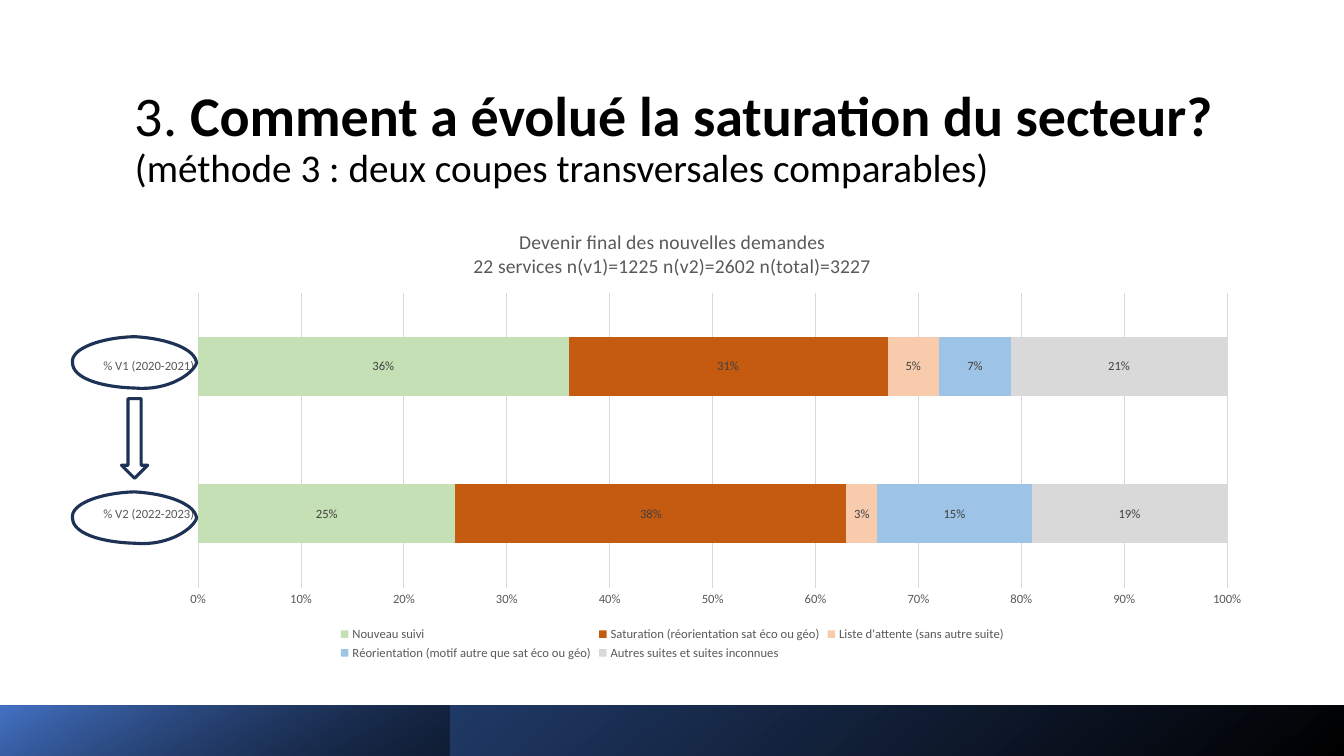
import pptx
import pptx.chart.data
import pptx.dml.color
import pptx.enum.chart
import pptx.enum.shapes
import pptx.enum.text
import pptx.oxml
import pptx.oxml.ns
import pptx.util

# The grid has square cells, ten to the inch.
CELL = pptx.util.Inches(0.1)
COLS, ROWS = 133.33, 75
FONT = "Calibri"
HUES = {
    "ink": "000000", "blue": "2F5597", "sky": "4472C4", "navy": "1E3256",
    "grey": "595959", "label": "404040", "rule": "D9D9D9",
}
CATS = ["% V2 (2022-2023)", "% V1 (2020-2021)"]
SERIES = [
    ("Nouveau suivi", (0.25, 0.36), "C5E0B4"),
    ("Saturation (réorientation sat éco ou géo)", (0.38, 0.31), "C55A11"),
    ("Liste d'attente (sans autre suite)", (0.03, 0.05), "F8CBAD"),
    ("Réorientation (motif autre que sat éco ou géo)", (0.15, 0.07), "9DC3E6"),
    ("Autres suites et suites inconnues", (0.19, 0.21), "D9D9D9"),
]
# Bézier points of the hand-drawn ring, as shares of its box.
RING = [
    (0, 0.51), (-0.02, 0.24), (0.22, 0.02), (0.5, 0),
    (0.78, 0.04), (0.99, 0.25), (1, 0.51),
    (0.98, 0.69), (0.79, 1.06), (0.5, 1),
    (0.22, 0.98), (0, 0.8), (0, 0.51),
]


def rgb(code):
    return pptx.dml.color.RGBColor.from_string(code)


def place(box):
    return [round(n * CELL) for n in box]


def style(item, values):
    for name, value in values.items():
        setattr(item, name, value)


def set_font(font, size, hue, bold=False):
    style(font, {"name": FONT, "size": pptx.util.Pt(size), "bold": bold})
    font.color.rgb = rgb(HUES[hue])


def set_line(line, hue, width):
    line.color.rgb = rgb(HUES[hue])
    line.width = pptx.util.Pt(width)


def add_head(slide, box):
    frame = slide.shapes.add_textbox(*place(box)).text_frame
    style(frame, {"word_wrap": True,
                  "vertical_anchor": pptx.enum.text.MSO_ANCHOR.MIDDLE})
    para = frame.paragraphs[0]
    para.line_spacing = 0.9
    for text, size, bold in (
        ("3. ", 40, False),
        ("Comment a évolué la saturation du secteur? ", 40, True),
        ("(méthode 3 : deux coupes transversales comparables)", 28, False),
    ):
        run = para.add_run()
        run.text = text
        set_font(run.font, size, "ink", bold)


def add_band(slide, box, hue, end, angle, alpha=100):
    """Add a bar that fades from black, at the given opacity, to the hue."""
    band = slide.shapes.add_shape(
        pptx.enum.shapes.MSO_SHAPE.RECTANGLE, *place(box))
    band.shadow.inherit = False
    band.line.fill.background()
    band.fill.gradient()
    band.fill.gradient_angle = angle
    stops = band.fill.gradient_stops
    for stop, name, spot in zip(stops, ("ink", hue), (0, end)):
        stop.color.rgb = rgb(HUES[name])
        stop.position = spot
    if alpha < 100:
        tint = next(band.element.iter(pptx.oxml.ns.qn("a:srgbClr")))
        tint.append(pptx.oxml.parse_xml(
            f'<a:alpha {pptx.oxml.ns.nsdecls("a")} val="{alpha * 1000}"/>'))


def add_title(chart):
    frame = chart.chart_title.text_frame
    frame.text = ("Devenir final des nouvelles demandes\n"
                  "22 services n(v1)=1225 n(v2)=2602 n(total)=3227")
    for para in frame.paragraphs:
        set_font(para.runs[0].font, 14, "grey")


def set_axes(chart):
    none = pptx.enum.chart.XL_TICK_MARK.NONE
    for axis in (chart.category_axis, chart.value_axis):
        style(axis, {"major_tick_mark": none, "minor_tick_mark": none})
        set_font(axis.tick_labels.font, 9, "grey")
    set_line(chart.category_axis.format.line, "rule", 0.75)
    scale = chart.value_axis
    style(scale, {"minimum_scale": 0, "maximum_scale": 1, "major_unit": 0.1,
                  "has_major_gridlines": True})
    style(scale.tick_labels, {"number_format": "0%",
                              "number_format_is_linked": False})
    scale.format.line.fill.background()
    set_line(scale.major_gridlines.format.line, "rule", 0.75)


def add_bars(slide, box):
    data = pptx.chart.data.CategoryChartData(number_format="0%")
    data.categories = CATS
    for name, values, _ in SERIES:
        data.add_series(name, values)
    chart = slide.shapes.add_chart(
        pptx.enum.chart.XL_CHART_TYPE.BAR_STACKED, *place(box), data).chart
    set_font(chart.font, 10, "ink")
    add_title(chart)
    set_axes(chart)
    chart.has_legend = True
    style(chart.legend, {
        "position": pptx.enum.chart.XL_LEGEND_POSITION.BOTTOM,
        "include_in_layout": False})
    set_font(chart.legend.font, 9, "grey")
    plot = chart.plots[0]
    style(plot, {"gap_width": 150, "overlap": 100,
                 "vary_by_categories": False})
    for series, (_, _, code) in zip(plot.series, SERIES):
        series.format.fill.solid()
        series.format.fill.fore_color.rgb = rgb(code)
        style(series.data_labels, {
            "show_value": True, "number_format": "0%",
            "number_format_is_linked": False,
            "position": pptx.enum.chart.XL_LABEL_POSITION.CENTER})
        set_font(series.data_labels.font, 9, "label")


def outline(shape):
    shape.shadow.inherit = False
    shape.fill.background()
    set_line(shape.line, "navy", 2.25)


def curve(a, b, c, d, t):
    s = 1 - t
    return tuple(s**3 * p + 3 * s * s * t * q + 3 * s * t * t * r + t**3 * u
                 for p, q, r, u in zip(a, b, c, d))


def add_ring(slide, box):
    left, top, width, height = place(box)
    steps = 16
    dots = [curve(*RING[k:k + 4], n / steps)
            for k in range(0, len(RING) - 1, 3) for n in range(steps)]
    spots = [(round(left + x * width), round(top + y * height))
             for x, y in dots]
    pen = slide.shapes.build_freeform(*spots[0])
    pen.add_line_segments(spots[1:], close=True)
    outline(pen.convert_to_shape())


def add_arrow(slide, box):
    arrow = slide.shapes.add_shape(
        pptx.enum.shapes.MSO_SHAPE.RIGHT_ARROW, *place(box))
    arrow.rotation = 90
    outline(arrow)


def main():
    deck = pptx.Presentation()
    deck.slide_width, deck.slide_height = place((COLS, ROWS))
    slide = deck.slides.add_slide(deck.slide_layouts[6])
    add_head(slide, (12.4, 7.8, 111.3, 12))
    add_band(slide, (0, 70, COLS, 5), "blue", 1, 130)
    add_band(slide, (0, 70, 44.6, 5), "sky", 0.99, 120, 46)
    add_bars(slide, (7.9, 20.9, 117.6, 45))
    for top in (33.4, 48.8):
        add_ring(slide, (7.2, top, 12.3, 5.1))
    add_arrow(slide, (9.4, 42.2, 7.9, 2.6))
    deck.save("out.pptx")


if __name__ == "__main__":
    main()
